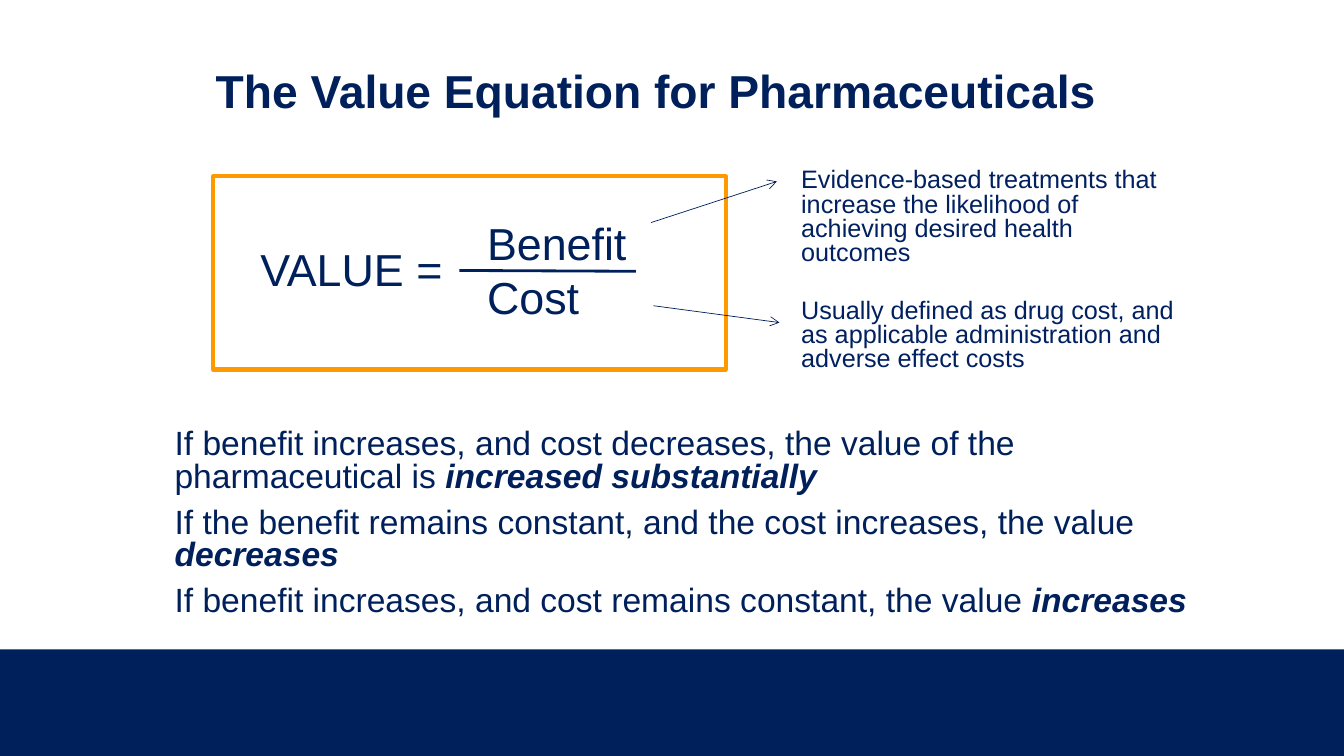
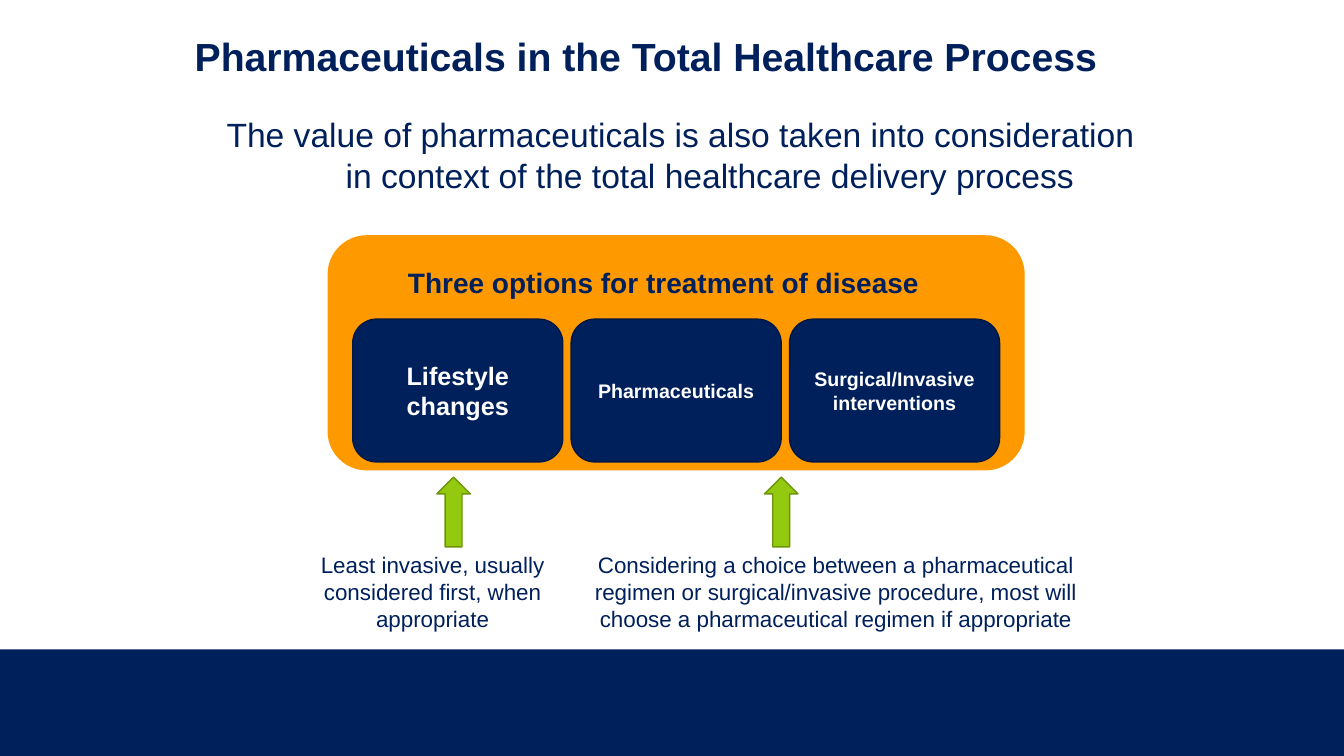
"""Build two slides on the value of pharmaceuticals, laid out on a 160 by 90 grid."""
import pptx
import pptx.dml.color
import pptx.enum.shapes
import pptx.enum.text
import pptx.oxml.ns
import pptx.util
from lxml import etree

RGBColor = pptx.dml.color.RGBColor
NAVY = RGBColor(0x00, 0x20, 0x5B)
NAVY_EDGE = RGBColor(0x00, 0x18, 0x43)
CALLOUT_BLUE = RGBColor(0x00, 0x20, 0x60)
ORANGE = RGBColor(0xFF, 0x99, 0x00)
GREEN = RGBColor(0x93, 0xC9, 0x0E)
GREEN_EDGE = RGBColor(0x6D, 0x95, 0x0A)
WHITE = RGBColor(0xFF, 0xFF, 0xFF)

FONT = "Arial"
COLS, ROWS = 160, 90
CELL = pptx.util.Inches(7.5) / ROWS
BAND_TOP = 77.3

SHAPE = pptx.enum.shapes.MSO_SHAPE
ANCHOR = pptx.enum.text.MSO_ANCHOR
LEFT = pptx.enum.text.PP_ALIGN.LEFT
CENTER = pptx.enum.text.PP_ALIGN.CENTER


def grid(*cells):
    """Turn grid cells into slide lengths."""
    return [pptx.util.Emu(round(n * CELL)) for n in cells]


def write(tf, paragraphs, size, color=NAVY, bold=False, align=LEFT,
          anchor=ANCHOR.TOP, spacing=None, gap=0):
    """Write paragraphs of (plain, emphasised) text into a text frame."""
    tf.word_wrap = True
    tf.vertical_anchor = anchor
    for i, parts in enumerate(paragraphs):
        p = tf.paragraphs[0] if i == 0 else tf.add_paragraph()
        p.alignment = align
        if spacing:
            p.line_spacing = spacing
        if i:
            p.space_before = pptx.util.Pt(gap)
        for j, text in enumerate(parts):
            r = p.add_run()
            r.text = text
            r.font.name = FONT
            r.font.size = pptx.util.Pt(size)
            r.font.bold = bold or j == 1
            r.font.italic = j == 1
            r.font.color.rgb = color


def add_text(s, box, paragraphs, size, **style):
    """Add a text box."""
    sp = s.shapes.add_textbox(*grid(*box))
    write(sp.text_frame, paragraphs, size, **style)
    return sp


def add_block(s, kind, box, fill=None, edge=None, width=1):
    """Add a preset shape with an optional fill and outline."""
    sp = s.shapes.add_shape(kind, *grid(*box))
    sp.shadow.inherit = False
    if fill is None:
        sp.fill.background()
    else:
        sp.fill.solid()
        sp.fill.fore_color.rgb = fill
    if edge is None:
        sp.line.fill.background()
    else:
        sp.line.color.rgb = edge
        sp.line.width = pptx.util.Pt(width)
    return sp


def add_line(s, ends, width, arrow=False):
    """Add a straight line, with an open arrowhead at its end if asked."""
    line = s.shapes.add_connector(
        pptx.enum.shapes.MSO_CONNECTOR.STRAIGHT, *grid(*ends))
    line.line.color.rgb = NAVY
    line.line.width = pptx.util.Pt(width)
    if arrow:
        etree.SubElement(line.line._get_or_add_ln(),
                         pptx.oxml.ns.qn("a:tailEnd"), type="arrow")
    etree.SubElement(line._element.spPr, pptx.oxml.ns.qn("a:effectLst"))


def add_slide(prs, title, box, size):
    """Add a blank slide with the shared footer band and title style."""
    s = prs.slides.add_slide(prs.slide_layouts[6])
    add_block(s, SHAPE.RECTANGLE, (0, BAND_TOP, COLS, ROWS - BAND_TOP), NAVY)
    add_text(s, box, [(title,)], size, bold=True, anchor=ANCHOR.MIDDLE, spacing=0.9)
    return s


def build_equation(prs):
    """Build the value equation slide."""
    s = add_slide(prs, "The Value Equation for Pharmaceuticals", (24.5, 5.2, 111, 11.9), 33)
    add_text(s, (19.6, 50.6, 124, 25), [
        ("If benefit increases, and cost decreases, the value of the pharmaceutical is ",
         "increased substantially"),
        ("If the benefit remains constant, and the cost increases, the value ", "decreases"),
        ("If benefit increases, and cost remains constant, the value ", "increases"),
    ], 24, spacing=0.8, gap=9.8)
    add_text(s, (29.8, 28.2, 28, 7.7), [("VALUE =",)], 32)
    add_text(s, (56.8, 25.1, 28, 14.2), [("Benefit",), ("Cost",)], 32)
    add_line(s, (54.7, 32.2, 75.7, 32.3), 2)
    add_block(s, SHAPE.RECTANGLE, (25.4, 21, 61, 23), edge=ORANGE, width=3)
    add_text(s, (94.2, 19.6, 47, 27.6), [
        ("Evidence-based treatments that increase the likelihood of achieving "
         "desired health outcomes",),
        ("Usually defined as drug cost, and as applicable administration and "
         "adverse effect costs",),
    ], 18, color=CALLOUT_BLUE, spacing=0.8, gap=24)
    for ends in ((77.5, 26.5, 92.5, 21.6), (77.8, 36.4, 92.8, 38.4)):
        add_line(s, ends, 0.5, arrow=True)


def build_process(prs):
    """Build the healthcare process slide."""
    s = add_slide(prs, "Pharmaceuticals in the Total Healthcare Process",
                  (22, 3.4, 114, 7.2), 28)
    add_block(s, SHAPE.ROUNDED_RECTANGLE, (39, 28, 83, 28), ORANGE)
    lead = add_text(s, (24, 13, 114, 11), [
        ("The value of pharmaceuticals is also taken into consideration "
         "in context of the total healthcare delivery process",)], 24, align=CENTER)
    hang = grid(7)[0]
    pPr = lead.text_frame.paragraphs[0]._p.get_or_add_pPr()
    pPr.set("marL", str(hang))
    pPr.set("indent", str(-hang))

    options = (("Lifestyle changes", 18), ("Pharmaceuticals", 14),
               ("Surgical/Invasive interventions", 14))
    for i, (label, size) in enumerate(options):
        sp = add_block(s, SHAPE.ROUNDED_RECTANGLE, (42 + 26 * i, 38, 25, 17),
                       NAVY, NAVY_EDGE)
        write(sp.text_frame, [(label,)], size, color=WHITE, bold=True,
              align=CENTER, anchor=ANCHOR.MIDDLE)
    add_text(s, (44.5, 31, 69, 5.3), [("Three options for treatment of disease",)],
             20, bold=True, align=CENTER)

    notes = (
        (52, 37, 29, "Least invasive, usually considered first, when appropriate"),
        (91, 67, 65, "Considering a choice between a pharmaceutical regimen or "
                     "surgical/invasive procedure, most will choose a "
                     "pharmaceutical regimen if appropriate"),
    )
    for arrow_left, left, width, text in notes:
        add_block(s, SHAPE.UP_ARROW, (arrow_left, 56.8, 4, 8.3), GREEN, GREEN_EDGE)
        add_text(s, (left, 65, width, 11), [(text,)], 16, align=CENTER)


def main():
    """Build and save the presentation."""
    prs = pptx.Presentation()
    prs.slide_width, prs.slide_height = grid(COLS, ROWS)
    build_equation(prs)
    build_process(prs)
    prs.save("out.pptx")


if __name__ == "__main__":
    main()
